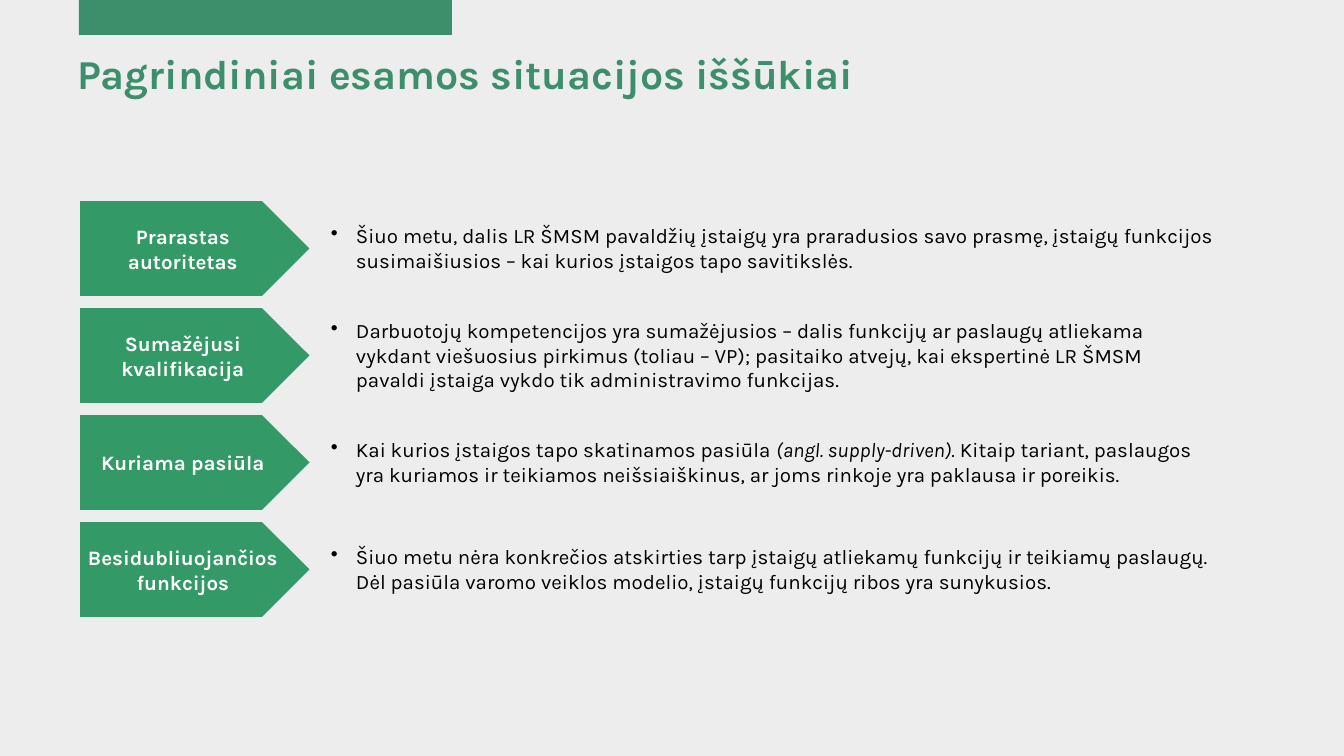
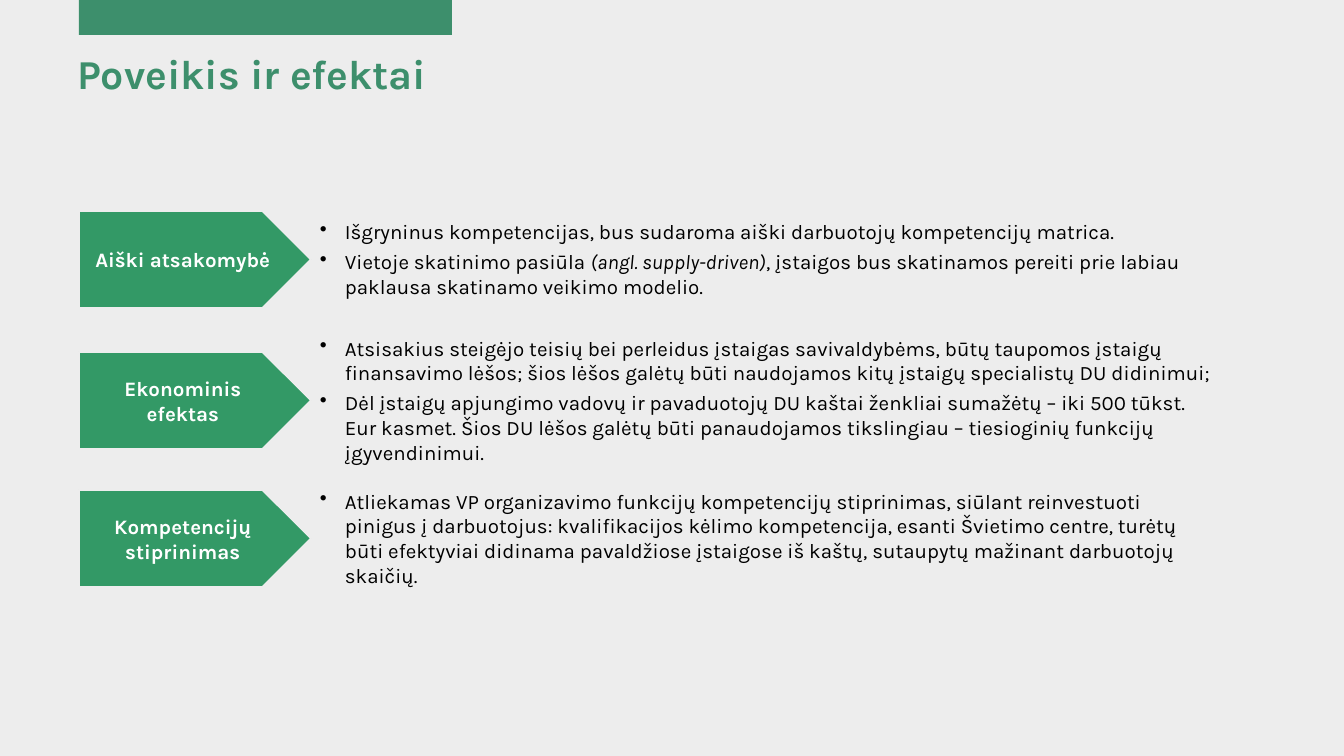
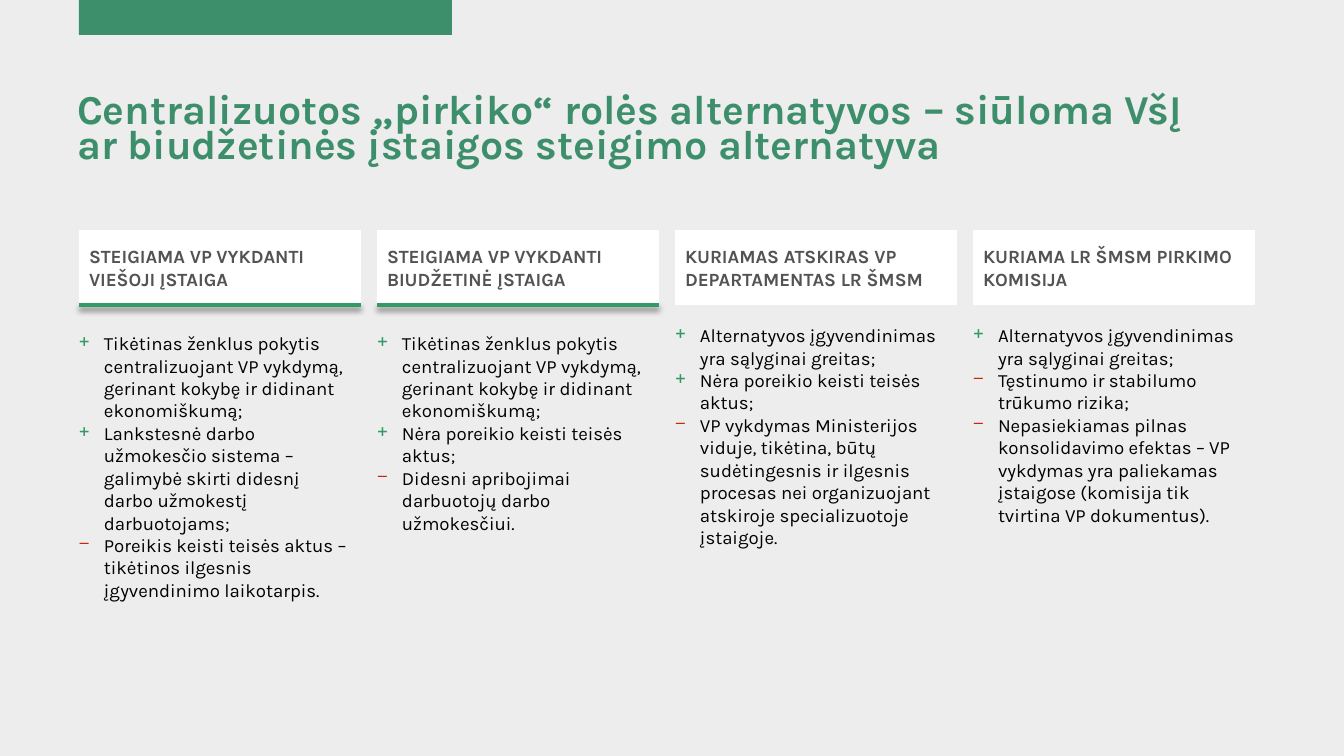
from lxml.etree import SubElement
from pptx import Presentation
from pptx.dml.color import RGBColor
from pptx.enum.shapes import MSO_CONNECTOR as Connector, MSO_SHAPE as Shape
from pptx.enum.text import MSO_ANCHOR as Anchor, PP_ALIGN as Align
from pptx.oxml.ns import qn
from pptx.util import Emu, Pt

PX = 914400 / 134.4
FONT = "Karla"
PAPER = RGBColor(0xED, 0xED, 0xED)
WHITE = RGBColor(0xFF, 0xFF, 0xFF)
BLACK = RGBColor(0x00, 0x00, 0x00)
GREY = RGBColor(0x53, 0x53, 0x53)
BRAND = RGBColor(0x3D, 0x8F, 0x6C)
GREEN = RGBColor(0x33, 0x99, 0x66)
RED = RGBColor(0xC8, 0x25, 0x06)

LEFT = 79
INDENT = 25
ARROW_W, ARROW_H = 232, 97
COLUMN_W, COLUMN_STEP = 282, 298
HEADER_TOP, HEADER_H = 230, 75

# A bullet is its character, colour and size in percent of the text.
DOT = ("•", BLACK, 100)
PRO = ("+", GREEN, 100)
CON = ("‒", RED, 90)

CHALLENGES = [
    ("Prarastas autoritetas",
     ["Šiuo metu, dalis LR ŠMSM pavaldžių įstaigų yra praradusios savo prasmę, "
      "įstaigų funkcijos susimaišiusios – kai kurios įstaigos tapo savitikslės."]),
    ("Sumažėjusi kvalifikacija",
     ["Darbuotojų kompetencijos yra sumažėjusios – dalis funkcijų ar paslaugų atliekama "
      "vykdant viešuosius pirkimus (toliau – VP); pasitaiko atvejų, kai ekspertinė LR ŠMSM "
      "pavaldi įstaiga vykdo tik administravimo funkcijas."]),
    ("Kuriama pasiūla",
     ["Kai kurios įstaigos tapo skatinamos pasiūla *(angl. supply-driven).* Kitaip tariant, "
      "paslaugos yra kuriamos ir teikiamos neišsiaiškinus, ar joms rinkoje yra paklausa ir "
      "poreikis."]),
    ("Besidubliuojančios funkcijos",
     ["Šiuo metu nėra konkrečios atskirties tarp įstaigų atliekamų funkcijų ir teikiamų "
      "paslaugų. Dėl pasiūla varomo veiklos modelio, įstaigų funkcijų ribos yra sunykusios."]),
]

EFFECTS = [
    ("Aiški atsakomybė",
     ["Išgryninus kompetencijas, bus sudaroma aiški darbuotojų kompetencijų matrica.",
      "Vietoje skatinimo pasiūla *(angl. supply-driven)*, įstaigos bus skatinamos pereiti prie "
      "labiau paklausa skatinamo veikimo modelio."]),
    ("Ekonominis efektas",
     ["Atsisakius steigėjo teisių bei perleidus įstaigas savivaldybėms, būtų taupomos įstaigų "
      "finansavimo lėšos; šios lėšos galėtų būti naudojamos kitų įstaigų specialistų DU "
      "didinimui;",
      "Dėl įstaigų apjungimo vadovų ir pavaduotojų DU kaštai ženkliai sumažėtų – iki 500 tūkst. "
      "Eur kasmet. Šios DU lėšos galėtų būti panaudojamos tikslingiau – tiesioginių funkcijų "
      "įgyvendinimui."]),
    ("Kompetencijų stiprinimas",
     ["Atliekamas VP organizavimo funkcijų kompetencijų stiprinimas, siūlant reinvestuoti "
      "pinigus į darbuotojus: kvalifikacijos kėlimo kompetencija, esanti Švietimo centre, "
      "turėtų būti efektyviai didinama pavaldžiose įstaigose iš kaštų, sutaupytų mažinant "
      "darbuotojų skaičių."]),
]

BIG_CHANGE = ("Tikėtinas ženklus pokytis centralizuojant VP vykdymą, gerinant kokybę ir "
              "didinant ekonomiškumą;")
SAME_LAW = "Nėra poreikio keisti teisės aktus;"
QUICK = "Alternatyvos įgyvendinimas yra sąlyginai greitas;"

# Heading, whether it is a proposed option, pros, cons.
ALTERNATIVES = [
    ("STEIGIAMA VP VYKDANTI VIEŠOJI ĮSTAIGA", True,
     [BIG_CHANGE,
      "Lankstesnė darbo užmokesčio sistema – galimybė skirti didesnį darbo užmokestį "
      "darbuotojams;"],
     ["Poreikis keisti teisės aktus – tikėtinos ilgesnis įgyvendinimo laikotarpis."]),
    ("STEIGIAMA VP VYKDANTI BIUDŽETINĖ ĮSTAIGA", True,
     [BIG_CHANGE, SAME_LAW],
     ["Didesni apribojimai darbuotojų darbo užmokesčiui."]),
    ("KURIAMAS ATSKIRAS VP DEPARTAMENTAS LR ŠMSM", False,
     [QUICK, SAME_LAW],
     ["VP vykdymas Ministerijos viduje, tikėtina, būtų sudėtingesnis ir ilgesnis procesas nei "
      "organizuojant atskiroje specializuotoje įstaigoje."]),
    ("KURIAMA LR ŠMSM PIRKIMO KOMISIJA", False,
     [QUICK],
     ["Tęstinumo ir stabilumo trūkumo rizika;",
      "Nepasiekiamas pilnas konsolidavimo efektas – VP vykdymas yra paliekamas įstaigose "
      "(komisija tik tvirtina VP dokumentus)."]),
]


def px(length):
    return Emu(round(length * PX))


def add_bullet(paragraph, bullet):
    char, color, percent = bullet
    props = paragraph._p.get_or_add_pPr()
    props.set("marL", str(px(INDENT)))
    props.set("indent", str(-px(INDENT)))
    SubElement(SubElement(props, qn("a:buClr")), qn("a:srgbClr"), val=str(color))
    SubElement(props, qn("a:buSzPct"), val=str(percent * 1000))
    SubElement(props, qn("a:buChar"), char=char)


def write(shape, lines, *, size, color=BLACK, bold=False, align=Align.LEFT, anchor=Anchor.TOP,
          insets=(8, 8, 8, 8), bullets=(), after=0, spacing=1.0):
    """Fill a shape with one paragraph a line; *stars* enclose italics."""
    frame = shape.text_frame
    frame.word_wrap = True
    frame.vertical_anchor = anchor
    (frame.margin_left, frame.margin_top,
     frame.margin_right, frame.margin_bottom) = map(px, insets)
    for i, line in enumerate(lines):
        paragraph = frame.add_paragraph() if i else frame.paragraphs[0]
        if bullets:
            add_bullet(paragraph, bullets[i])
        paragraph.alignment = align
        paragraph.line_spacing = spacing
        paragraph.space_after = Pt(after)
        for j, part in enumerate(line.split("*")):
            run = paragraph.add_run()
            run.text = part
            font = run.font
            font.name, font.size, font.bold = FONT, Pt(size), bold
            font.italic = j % 2 == 1
            font.color.rgb = color


class Deck:
    def __init__(self):
        self.prs = Presentation()
        self.prs.slide_width, self.prs.slide_height = px(1344), px(756)
        self.slide = None

    def start(self, title, top=44, height=83, spacing=1.0):
        """Open a slide with its background, top band and title."""
        self.slide = self.prs.slides.add_slide(self.prs.slide_layouts[6])
        background = self.slide.background.fill
        background.solid()
        background.fore_color.rgb = PAPER
        self.block(LEFT, 0, 373, 35, BRAND)
        self.text(73, top, 1125, height, [title], size=22, color=BRAND, bold=True,
                  insets=(4, 4, 4, 4), spacing=spacing)

    def block(self, x, y, w, h, fill, kind=Shape.RECTANGLE, outline=None):
        shape = self.slide.shapes.add_shape(kind, px(x), px(y), px(w), px(h))
        shape.shadow.inherit = False
        shape.fill.solid()
        shape.fill.fore_color.rgb = fill
        if outline is None:
            shape.line.fill.background()
        else:
            shape.line.color.rgb = outline
            shape.line.width = Pt(1)
        return shape

    def text(self, x, y, w, h, lines, **style):
        write(self.slide.shapes.add_textbox(px(x), px(y), px(w), px(h)), lines, **style)

    def underline(self, x, y, w):
        """Draw a green rule with a soft shadow below it."""
        rule = self.slide.shapes.add_connector(Connector.STRAIGHT, px(x), px(y), px(x + w), px(y))
        rule.line.color.rgb = GREEN
        rule.line.width = Pt(2)
        effects = SubElement(rule._element.spPr, qn("a:effectLst"))
        shadow = SubElement(effects, qn("a:outerShdw"), blurRad=str(Pt(3)), dist=str(Pt(2)),
                            dir="5400000", rotWithShape="0")
        tint = SubElement(shadow, qn("a:srgbClr"), val=str(BLACK))
        SubElement(tint, qn("a:alpha"), val="50000")

    def arrow_row(self, top, label, points, text_left, text_width, after=0):
        arrow = self.block(LEFT, top, ARROW_W, ARROW_H, GREEN, Shape.PENTAGON, PAPER)
        write(arrow, [label], size=11, color=WHITE, bold=True, align=Align.CENTER,
              anchor=Anchor.MIDDLE, after=after)
        self.text(text_left, top - 3, text_width, 102, points, size=11, anchor=Anchor.MIDDLE,
                  bullets=[DOT] * len(points), after=after)

    def alternative(self, x, heading, proposed, pros, cons):
        header = self.block(x, HEADER_TOP, COLUMN_W, HEADER_H, WHITE)
        write(header, [heading], size=10, color=GREY, bold=True, anchor=Anchor.MIDDLE,
              insets=(10, 5, 10, 5))
        self.text(x, 327 if proposed else 319, COLUMN_W, 378, pros + cons, size=10,
                  insets=(0, 5, 10, 5), bullets=[PRO] * len(pros) + [CON] * len(cons))
        if proposed:
            self.underline(x, HEADER_TOP + HEADER_H, COLUMN_W)


def main():
    deck = Deck()

    deck.start("Pagrindiniai esamos situacijos iššūkiai")
    for row, (label, points) in enumerate(CHALLENGES):
        deck.arrow_row(200 + 107 * row, label, points, 323, 900)

    deck.start("Poveikis ir efektai")
    for top, (label, points) in zip((211, 352, 490), EFFECTS):
        deck.arrow_row(top, label, points, 312, 910, after=3)

    deck.start("Centralizuotos „pirkiko“ rolės alternatyvos – siūloma VšĮ ar biudžetinės įstaigos "
               "steigimo alternatyva", top=93, height=202, spacing=0.7)
    for column, option in enumerate(ALTERNATIVES):
        deck.alternative(LEFT + COLUMN_STEP * column, *option)

    deck.prs.save("out.pptx")


if __name__ == "__main__":
    main()
